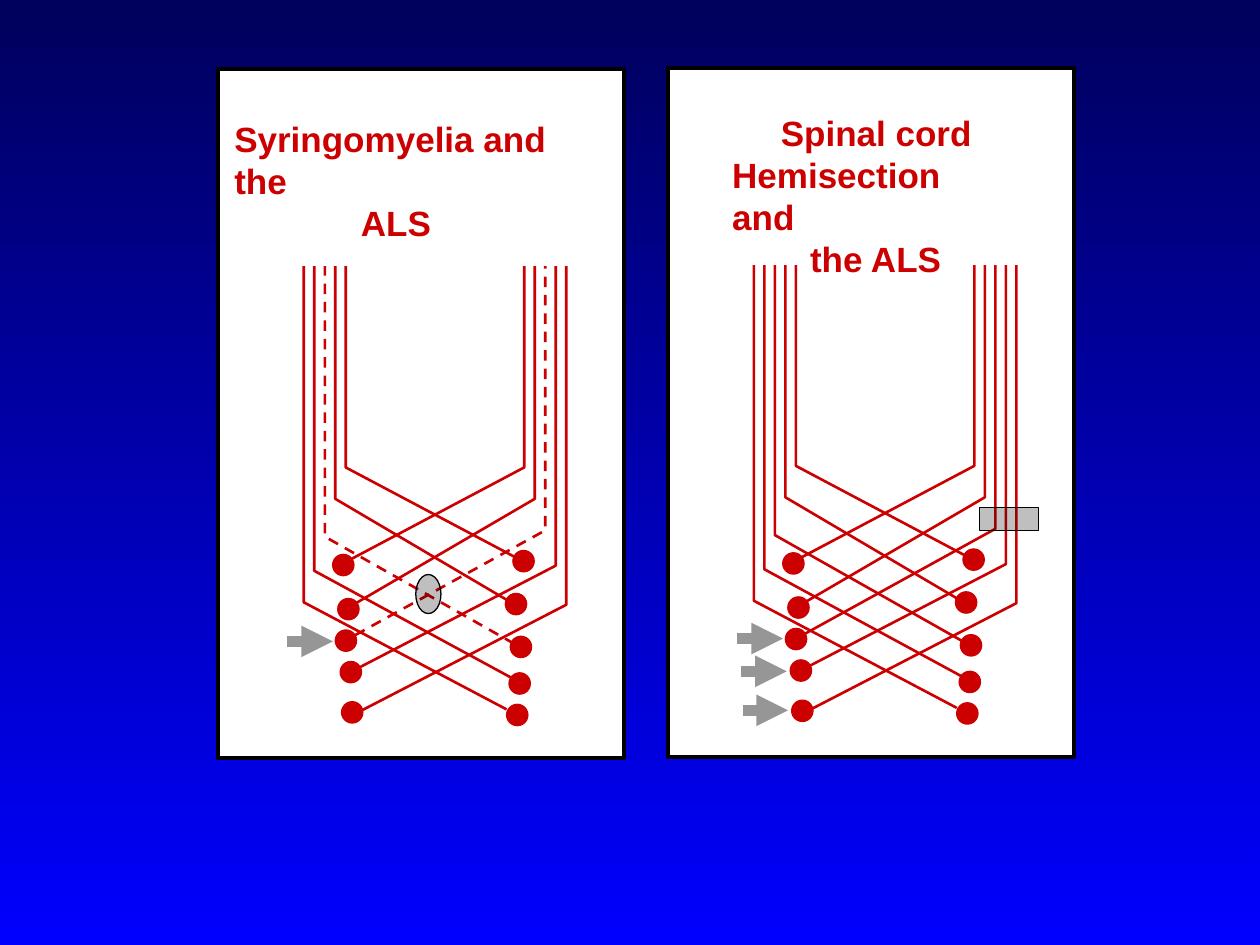
from lxml import etree
from pptx import Presentation
from pptx.dml.color import RGBColor
from pptx.enum.dml import MSO_LINE
from pptx.enum.shapes import MSO_CONNECTOR, MSO_SHAPE
from pptx.oxml.ns import qn
from pptx.util import Pt

DASH = MSO_LINE.DASH
STRAIGHT = MSO_CONNECTOR.STRAIGHT
RECTANGLE, OVAL = MSO_SHAPE.RECTANGLE, MSO_SHAPE.OVAL

NIGHT = RGBColor(0x00, 0x00, 0x5D)
BLUE = RGBColor(0x00, 0x00, 0xFF)
WHITE = RGBColor(0xFF, 0xFF, 0xFF)
BLACK = RGBColor(0x00, 0x00, 0x00)
RED = RGBColor(0xCC, 0x00, 0x00)
GRAY = RGBColor(0x96, 0x96, 0x96)

PANEL_WIDTH, PANEL_HEIGHT = 231.8, 393.8
NEURON_SIZE = 12.2
TRACT_STEP = 6
ARROW_LENGTH = 26

# Each row: tract start x, start y, bend y, top y, neuron left, neuron top
LEFT_RISING = [
    (175, 281.5, 227.5, 23.8, 168.5, 275),
    (168.5, 305.3, 245.5, 17.3, 164.2, 299.5),
    (169.2, 328.3, 267.1, 35.3, 167, 324),
    (167.8, 347.8, 286.6, 53.3, 166.3, 344.9),
    (164.9, 365.8, 304.6, 71.3, 164.9, 362.9),
]
RIGHT_RISING = [
    (73, 281.5, 227.5, 23.8, 65.5, 277.2),
    (78.5, 305.3, 245.5, 17.3, 68.4, 302.4),
    (78.5, 323.3, 263.5, 35.3, 67, 320.4),
    (77.8, 343.4, 283.7, 55.4, 69.8, 338.4),
    (77.8, 368.6, 306, 69.1, 70.6, 361.4),
]
TRACT_GROUPS = [(73, -TRACT_STEP, LEFT_RISING), (175, TRACT_STEP, RIGHT_RISING)]

PANELS = [
    {
        "origin": (124.6, 39.6),
        "dashed_tract": 2,
        "lesion": (OVAL, 113, 288.7, 14.4, 22.3),
        "arrows": [(39.6, 326.9)],
        "title_box": (2.2, 23.8, 226, 55.4),
        "title": [("Syringomyelia and the", 0), ("ALS", 72.3)],
    },
    {
        "origin": (381.8, 38.7),
        "dashed_tract": None,
        "lesion": (RECTANGLE, 177.8, 251.3, 33.8, 13),
        "arrows": [(39.6, 326.2), (41.8, 344.9), (42.5, 367.2)],
        "title_box": (29.5, 21.6, 172, 79.2),
        "title": [("Spinal cord", 27.8), ("Hemisection and", 0), ("the ALS", 44.5)],
    },
]


def add_preset(slide, kind, left, top, width, height, fill, line, line_width=0.75):
    shape = slide.shapes.add_shape(kind, Pt(left), Pt(top), Pt(width), Pt(height))
    shape.shadow.inherit = False
    shape.fill.solid()
    shape.fill.fore_color.rgb = fill
    shape.line.color.rgb = line
    shape.line.width = Pt(line_width)
    return shape


def add_tract(slide, points, dashed):
    start, *rest = [(Pt(x), Pt(y)) for x, y in points]
    builder = slide.shapes.build_freeform(*start)
    builder.add_line_segments(rest, close=False)
    shape = builder.convert_to_shape()
    shape.shadow.inherit = False
    shape.fill.background()
    shape.line.color.rgb = RED
    shape.line.width = Pt(1.5)
    if dashed:
        shape.line.dash_style = DASH


def add_pathways(slide, left, top, dashed_tract):
    for inner_x, step, rows in TRACT_GROUPS:
        for index, (start_x, start_y, bend_y, top_y, _, _) in enumerate(rows):
            bend_x = inner_x + index * step
            points = [(start_x, start_y), (bend_x, bend_y), (bend_x, top_y)]
            add_tract(slide, [(left + x, top + y) for x, y in points], index == dashed_tract)
    for _, _, rows in TRACT_GROUPS:
        for *_, neuron_x, neuron_y in rows:
            add_preset(slide, OVAL, left + neuron_x, top + neuron_y,
                       NEURON_SIZE, NEURON_SIZE, RED, RED)


def add_lesion(slide, left, top, kind, x, y, width, height):
    shape = add_preset(slide, kind, left + x, top + y, width, height, BLACK, BLACK)
    color = shape.fill._xPr.find(qn("a:solidFill"))[0]
    etree.SubElement(color, qn("a:alpha"), val="25000")


def add_arrow(slide, left, top):
    arrow = slide.shapes.add_connector(
        STRAIGHT, Pt(left), Pt(top), Pt(left + ARROW_LENGTH), Pt(top))
    arrow.line.color.rgb = GRAY
    arrow.line.width = Pt(6)
    etree.SubElement(arrow.line._get_or_add_ln(), qn("a:tailEnd"), type="triangle")
    etree.SubElement(arrow._element.spPr, qn("a:effectLst"))


def add_title(slide, left, top, width, height, lines):
    box = slide.shapes.add_textbox(Pt(left), Pt(top), Pt(width), Pt(height))
    frame = box.text_frame
    frame.word_wrap = True
    for index, (text, indent) in enumerate(lines):
        paragraph = frame.add_paragraph() if index else frame.paragraphs[0]
        paragraph.line_spacing = Pt(24)
        paragraph._p.get_or_add_pPr().set("marL", str(Pt(indent)))
        run = paragraph.add_run()
        run.text = text
        run.font.name = "Arial"
        run.font.size = Pt(20)
        run.font.bold = True
        run.font.color.rgb = RED


def add_panel(slide, panel):
    left, top = panel["origin"]
    add_preset(slide, RECTANGLE, left, top, PANEL_WIDTH, PANEL_HEIGHT, WHITE, BLACK, 2.25)
    add_pathways(slide, left, top, panel["dashed_tract"])
    add_preset(slide, RECTANGLE, left + 36.7, top + 10.1, 171.4, 102.2, WHITE, WHITE)
    add_lesion(slide, left, top, *panel["lesion"])
    x, y, width, height = panel["title_box"]
    add_title(slide, left + x, top + y, width, height, panel["title"])
    for x, y in panel["arrows"]:
        add_arrow(slide, left + x, top + y)


def set_background(slide):
    fill = slide.background.fill
    fill.gradient()
    fill.gradient_angle = 270
    for stop, color in zip(fill.gradient_stops, (NIGHT, BLUE)):
        stop.color.rgb = color


def main():
    presentation = Presentation()
    presentation.slide_width = Pt(720)
    presentation.slide_height = Pt(540)
    slide = presentation.slides.add_slide(presentation.slide_layouts[6])
    set_background(slide)
    for panel in PANELS:
        add_panel(slide, panel)
    presentation.save("out.pptx")


if __name__ == "__main__":
    main()
